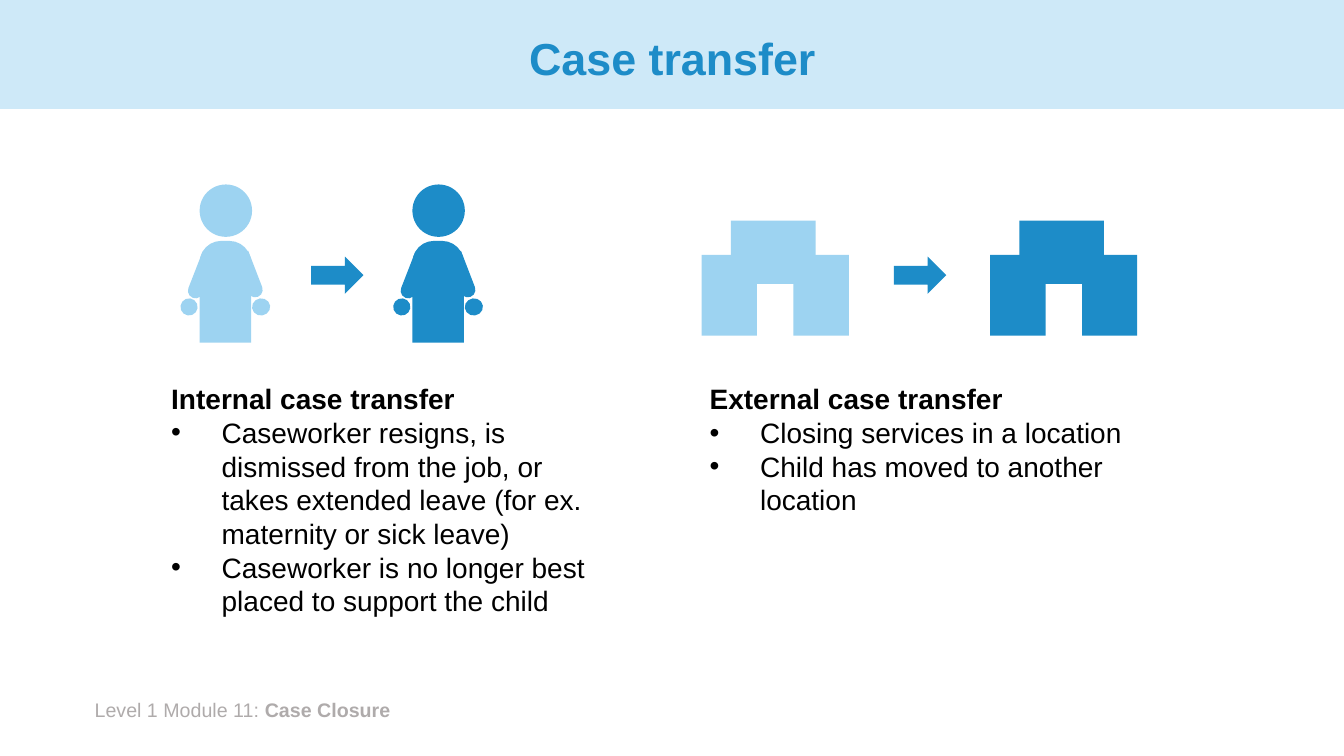
from dataclasses import dataclass

from lxml.etree import SubElement
from pptx import Presentation
from pptx.dml.color import RGBColor
from pptx.enum.shapes import MSO_SHAPE as Preset
from pptx.enum.text import MSO_ANCHOR as Anchor, MSO_AUTO_SIZE as AutoSize, PP_ALIGN as Align
from pptx.oxml.ns import qn
from pptx.util import Inches, Pt


@dataclass(frozen=True)
class Theme:
    font: str = "Arial"
    band: str = "CEE9F8"
    before: str = "9DD3F1"
    after: str = "1D8CC8"
    paper: str = "FFFFFF"
    ink: str = "000000"
    muted: str = "AFABAB"
    title_size: int = 32
    body_size: int = 20
    footer_size: int = 14


class CaseSlide:
    def __init__(self, slide, theme):
        self.slide = slide
        self.theme = theme

    def block(self, box, color, preset=Preset.RECTANGLE, parent=None, turn=0, rounding=None, mirrored=False):
        shapes = (parent or self.slide).shapes
        block = shapes.add_shape(preset, *map(Inches, box))
        block.shadow.inherit = False
        block.fill.solid()
        block.fill.fore_color.rgb = RGBColor.from_string(color)
        block.line.fill.background()
        block.rotation = turn
        if rounding is not None:
            block.adjustments[0] = rounding
            block.adjustments[1] = 0
        if mirrored:
            block.element.spPr.find(qn("a:xfrm")).set("flipH", "1")

    def text_frame(self, box, grows=True):
        frame = self.slide.shapes.add_textbox(*map(Inches, box)).text_frame
        frame.word_wrap = True
        frame.auto_size = AutoSize.SHAPE_TO_FIT_TEXT if grows else AutoSize.NONE
        return frame

    def run(self, paragraph, text, size, color, bold=False):
        run = paragraph.add_run()
        run.text = text
        run.font.name = self.theme.font
        run.font.size = Pt(size)
        run.font.bold = bold
        run.font.color.rgb = RGBColor.from_string(color)

    def title(self, text):
        frame = self.text_frame((0.92, 0.13, 11.5, 0.95), grows=False)
        frame.vertical_anchor = Anchor.MIDDLE
        heading = frame.paragraphs[0]
        heading.alignment = Align.CENTER
        heading.line_spacing = 0.9
        self.run(heading, text, self.theme.title_size, self.theme.after, bold=True)

    def footer(self, module, topic):
        credit = self.text_frame((0.84, 6.87, 4.55, 0.34)).paragraphs[0]
        self.run(credit, module, self.theme.footer_size, self.theme.muted)
        self.run(credit, topic, self.theme.footer_size, self.theme.muted, bold=True)

    def reasons(self, left, height, heading, points):
        frame = self.text_frame((left, 3.74, 4.37, height))
        self.run(frame.paragraphs[0], heading, self.theme.body_size, self.theme.ink, bold=True)
        for point in points:
            paragraph = frame.add_paragraph()
            indent = paragraph._p.get_or_add_pPr()
            indent.set("marL", str(Inches(0.5)))
            indent.set("indent", str(-Inches(0.5)))
            SubElement(indent, qn("a:buFont")).set("typeface", self.theme.font)
            SubElement(indent, qn("a:buChar")).set("char", "•")
            self.run(paragraph, point, self.theme.body_size, self.theme.ink)

    def caseworker(self, left, color):
        person = self.slide.shapes.add_group_shape()
        rounded, oval = Preset.ROUND_2_SAME_RECTANGLE, Preset.OVAL
        self.block((left + 0.19, 2.39, 0.51, 1.01), color, rounded, person, rounding=0.419)
        self.block((left + 0.19, 1.83, 0.52, 0.52), color, oval, person)
        arms = ((0.13, 2.51, 201.3, 0, 0.17, 8.5, False),
                (0.61, 2.5, 158.9, 0.71, 0.18, 351.8, True))
        for arm_x, arm_y, arm_turn, hand_x, hand_width, hand_turn, mirrored in arms:
            self.block((left + arm_x, arm_y, 0.15, 0.46), color, rounded, person,
                       arm_turn, 0.493, mirrored)
            self.block((left + hand_x, 2.96, hand_width, 0.17), color, oval, person,
                       hand_turn, mirrored=mirrored)

    def office(self, left, color):
        building = self.slide.shapes.add_group_shape()
        self.block((left, 2.53, 1.46, 0.8), color, parent=building)
        self.block((left + 0.29, 2.19, 0.84, 0.34), color, parent=building)
        self.block((left + 0.55, 2.82, 0.36, 0.57), self.theme.paper, parent=building)

    def transfer_arrow(self, left):
        self.block((left, 2.47, 0.37, 0.52), self.theme.after, Preset.DOWN_ARROW, turn=270)


def main():
    deck = Presentation()
    deck.slide_width, deck.slide_height = Inches(13.33), Inches(7.5)
    theme = Theme()
    page = CaseSlide(deck.slides.add_slide(deck.slide_layouts[6]), theme)

    page.block((0, 0, 13.33, 1.08), theme.band)
    page.footer("Level 1 Module 11: ", "Case Closure")
    page.title("Case transfer")

    page.reasons(6.94, 1.78, "External case transfer", (
        "Closing services in a location",
        "Child has moved to another location",
    ))
    page.reasons(1.6, 2.46, "Internal case transfer", (
        "Caseworker resigns, is dismissed from the job, or takes extended leave "
        "(for ex. maternity or sick leave)",
        "Caseworker is no longer best placed to support the child",
    ))

    for draw, before_left, after_left, arrow_left in (
        (page.caseworker, 1.79, 3.9, 3.16),
        (page.office, 6.96, 9.82, 8.94),
    ):
        draw(before_left, theme.before)
        draw(after_left, theme.after)
        page.transfer_arrow(arrow_left)

    deck.save("out.pptx")


if __name__ == "__main__":
    main()
